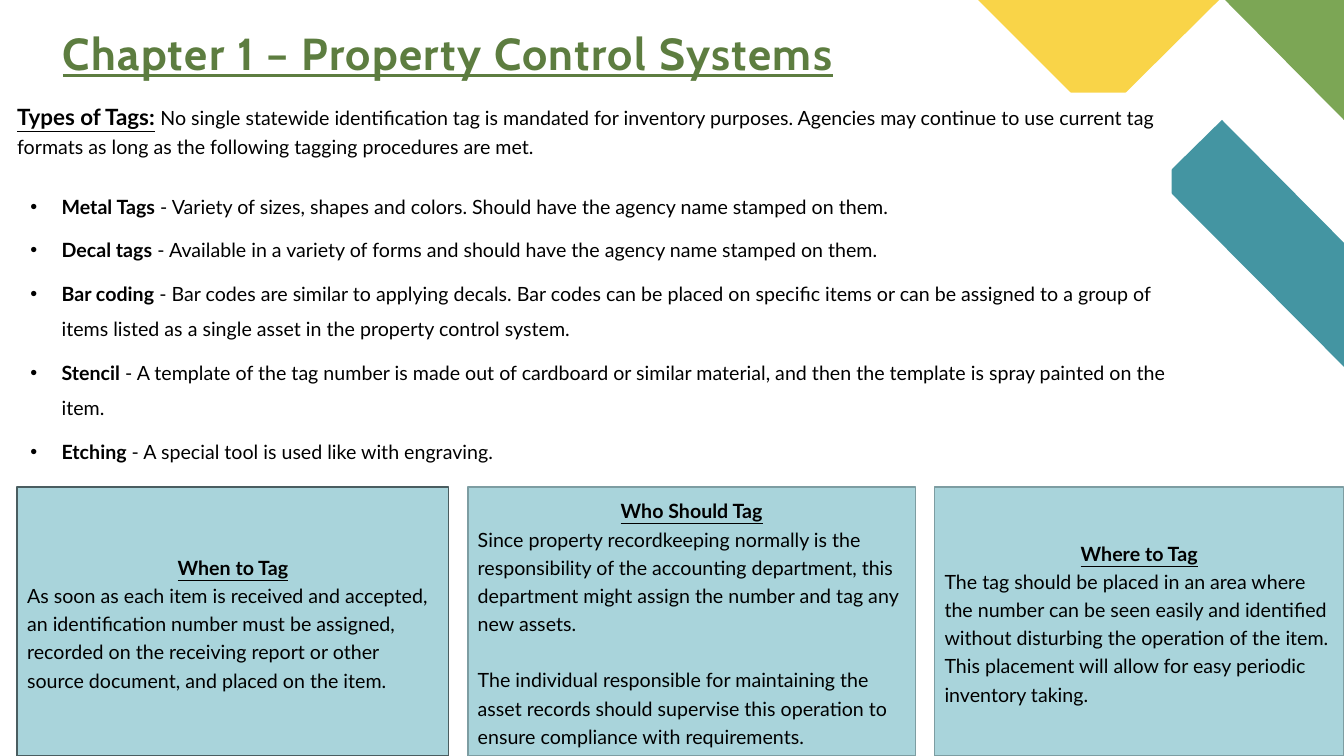
from lxml import etree
from pptx import Presentation
from pptx import util as u
from pptx.dml.color import RGBColor
from pptx.enum import shapes, text
from pptx.oxml.ns import qn

WIDTH, HEIGHT = u.Inches(13.33), u.Inches(7.5)
MARGIN, GAP = 1.28, 1.42
BOX_TOP, BOX_HEIGHT = 64.4, 35.6

STRIPES = [
    ("4495A2", [(100, 48.53), (100, 32.13), (90.92, 15.87), (86.27, 24)]),
    ("7CA655", [(100, 15.87), (100, 0), (91.15, 0)]),
    ("F9D448", [(72.77, 0), (81.7, 15.87), (90.7, 0)]),
]
INTRO = ("No single statewide identification tag is mandated for inventory purposes. "
         "Agencies may continue to use current tag formats as long as the following "
         "tagging procedures are met.")
TAGS = [
    ("Metal Tags", "Variety of sizes, shapes and colors. Should have the agency name "
                   "stamped on them."),
    ("Decal tags", "Available in a variety of forms and should have the agency name "
                   "stamped on them."),
    ("Bar coding", "Bar codes are similar to applying decals. Bar codes can be placed on "
                   "specific items or can be assigned to a group of items listed as a "
                   "single asset in the property control system."),
    ("Stencil", "A template of the tag number is made out of cardboard or similar "
                "material, and then the template is spray painted on the item."),
    ("Etching", "A special tool is used like with engraving."),
]
BOXES = [
    (32.11, "4A5D60", "When to Tag", [
        "As soon as each item is received and accepted, an identification number must be "
        "assigned, recorded on the receiving report or other source document, and placed "
        "on the item."]),
    (33.31, "7D9DA2", "Who Should Tag", [
        "Since property recordkeeping normally is the responsibility of the accounting "
        "department, this department might assign the number and tag any new assets.",
        "The individual responsible for maintaining the asset records should supervise "
        "this operation to ensure compliance with requirements."]),
    (30.45, "7D9DA2", "Where to Tag", [
        "The tag should be placed in an area where the number can be seen easily and "
        "identified without disturbing the operation of the item. This placement will "
        "allow for easy periodic inventory taking."]),
]


def across(percent):
    return round(WIDTH * percent / 100)


def down(percent):
    return round(HEIGHT * percent / 100)


def rgb(value):
    return RGBColor.from_string(value)


def fill(sp, color):
    sp.fill.solid()
    sp.fill.fore_color.rgb = rgb(color)


def place(sp, left, top, width, height):
    sp.left, sp.top = across(left), down(top)
    sp.width, sp.height = across(width), down(height)


def setup_frame(sp, anchor, inset=0.0, top=0.0):
    tf = sp.text_frame
    tf.word_wrap = True
    tf.auto_size = text.MSO_AUTO_SIZE.NONE
    tf.vertical_anchor = anchor
    tf.margin_left = tf.margin_right = u.Inches(inset)
    tf.margin_top = tf.margin_bottom = u.Inches(top)
    return tf


def add_run(p, words, size=14, bold=False, underline=False, font="Lato", color="000000"):
    r = p.add_run()
    r.text = words
    r.font.name, r.font.size = font, u.Pt(size)
    r.font.bold, r.font.underline = bold, underline
    r.font.color.rgb = rgb(color)
    return r


def add_paragraph(tf, spacing=1.2, before=0, after=0, align=text.PP_ALIGN.LEFT):
    first = tf.paragraphs[0]
    p = tf.add_paragraph() if first.runs else first
    p.alignment, p.line_spacing = align, spacing
    p.space_before, p.space_after = u.Pt(before), u.Pt(after)
    return p


def set_bullet(p, char=None, indent=0.0, hang=0.0):
    props = p._p.get_or_add_pPr()
    props.set("marL", str(u.Inches(indent)))
    props.set("indent", str(-u.Inches(hang)))
    if char:
        etree.SubElement(props, qn("a:buFont")).set("typeface", "Arial")
        etree.SubElement(props, qn("a:buChar")).set("char", char)
    else:
        etree.SubElement(props, qn("a:buNone"))


def add_stripe(s, color, points):
    corners = [(across(x), down(y)) for x, y in points]
    builder = s.shapes.build_freeform(*corners[0], scale=1.0)
    builder.add_line_segments(corners[1:], close=True)
    sp = builder.convert_to_shape()
    sp.shadow.inherit = False
    fill(sp, color)
    sp.line.fill.background()


def fill_title(sp):
    place(sp, 2.25, 2, 62.19, 8.53)
    tf = setup_frame(sp, text.MSO_ANCHOR.BOTTOM)
    p = add_paragraph(tf, spacing=0.8, align=text.PP_ALIGN.CENTER)
    r = add_run(p, "Chapter 1 – Property Control Systems", 32, True, True, "Cabin", "5D7D40")
    r.font._element.set("spc", "100")


def fill_body(sp):
    place(sp, MARGIN, 12.27, 85.9, 48.8)
    fill(sp, "FFFFFF")
    tf = setup_frame(sp, text.MSO_ANCHOR.TOP, top=0.05)
    tf.margin_bottom = 0
    p = add_paragraph(tf, after=11.5)
    set_bullet(p)
    add_run(p, "Types of Tags:", 16, True, True)
    add_run(p, " ", 16, True)
    add_run(p, INTRO)
    for name, description in TAGS:
        p = add_paragraph(tf, spacing=1.5, before=6)
        p.level = 1
        set_bullet(p, "•", 0.44, 0.31)
        add_run(p, name, bold=True)
        add_run(p, " - " + description)


def add_box(s, left, width, outline, heading, passages):
    sp = s.shapes.add_shape(shapes.MSO_SHAPE.RECTANGLE, across(left), down(BOX_TOP),
                            across(width), down(BOX_HEIGHT))
    sp.shadow.inherit = False
    fill(sp, "A9D4DB")
    sp.line.color.rgb = rgb(outline)
    sp.line.width = u.Pt(1)
    tf = setup_frame(sp, text.MSO_ANCHOR.MIDDLE, 0.1, 0.05)
    add_run(add_paragraph(tf, align=text.PP_ALIGN.CENTER), heading, bold=True, underline=True)
    for i, passage in enumerate(passages):
        add_run(add_paragraph(tf, before=20 if i else 0), passage)


def main():
    prs = Presentation()
    prs.slide_width, prs.slide_height = WIDTH, HEIGHT
    s = prs.slides.add_slide(prs.slide_layouts[1])
    for color, points in STRIPES:
        add_stripe(s, color, points)
    title, body = s.placeholders[0], s.placeholders[1]
    for sp in (title, body):
        s.shapes._spTree.append(sp._element)
    fill_title(title)
    fill_body(body)
    left = MARGIN
    for width, outline, heading, passages in BOXES:
        add_box(s, left, width, outline, heading, passages)
        left += width + GAP
    prs.save("out.pptx")


if __name__ == "__main__":
    main()
